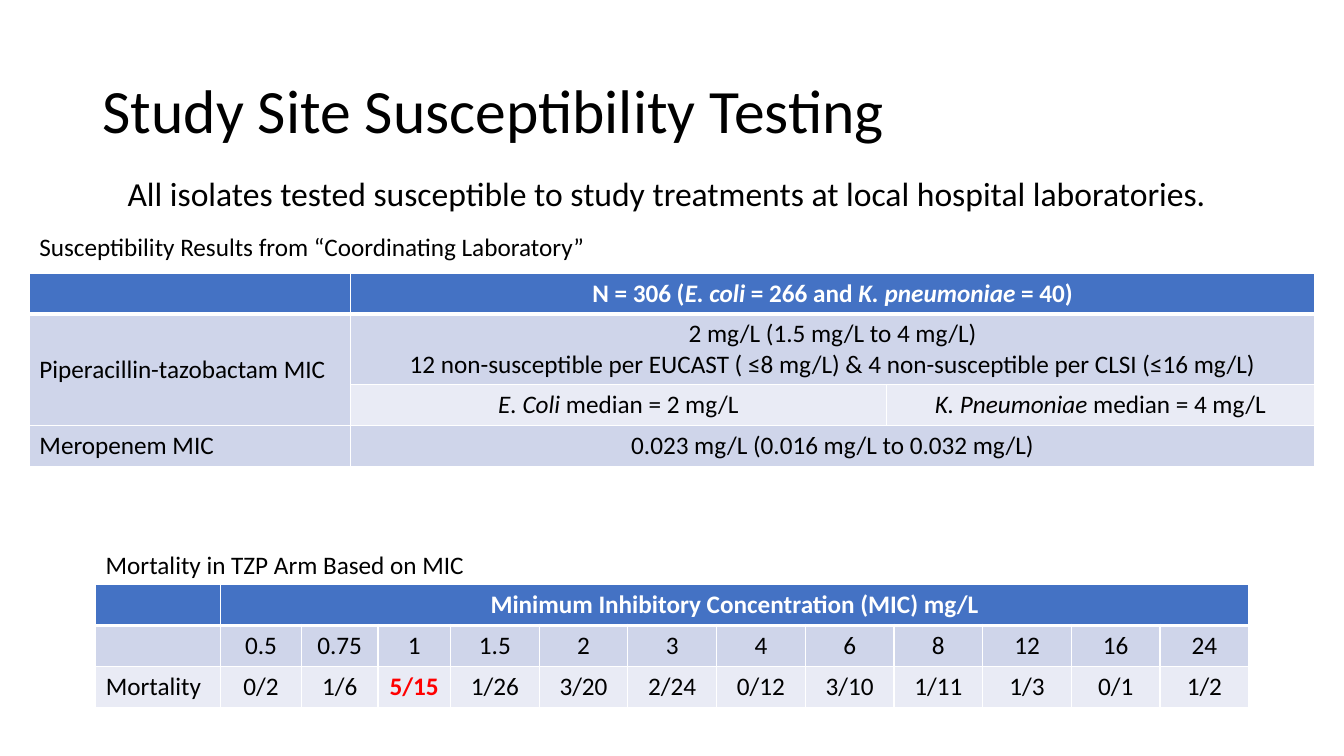
from dataclasses import dataclass

from lxml.etree import SubElement
from pptx import Presentation
from pptx.dml.color import RGBColor
from pptx.enum.text import MSO_ANCHOR, MSO_AUTO_SIZE, PP_ALIGN
from pptx.oxml.ns import qn
from pptx.util import Inches, Length, Pt

COLUMNS, ROWS = 160, 90
UNIT = Inches(7.5) / ROWS
FONT = "Calibri"
BLACK, WHITE, RED = "000000", "FFFFFF", "FF0000"
HEADER, BAND, LIGHT = "4472C4", "CFD5EA", "E9EBF5"
ROW_HEIGHT = 4.87


@dataclass(frozen=True)
class Box:
    left: float
    top: float
    width: float
    height: float

    def emu(self) -> list[Length]:
        return [grid(v) for v in (self.left, self.top, self.width, self.height)]


@dataclass(frozen=True)
class Caption:
    text: str
    box: Box
    size: int = 18


@dataclass(frozen=True)
class Cell:
    row: int
    col: int
    text: str = ""
    fill: str = BAND
    rows: int = 1
    cols: int = 1
    align: PP_ALIGN = PP_ALIGN.CENTER
    anchor: MSO_ANCHOR = MSO_ANCHOR.TOP
    color: str = BLACK
    bold: bool = False


@dataclass(frozen=True)
class Grid:
    left: float
    top: float
    widths: list[float]
    heights: list[float]
    cells: list[Cell]


def grid(units: float) -> Length:
    return Length(round(units * UNIT))


def rgb(color: str) -> RGBColor:
    return RGBColor.from_string(color)


def write(tf, text: str, size: int = 18, color: str = BLACK, bold: bool = False,
          align: PP_ALIGN = PP_ALIGN.LEFT) -> None:
    """Fill a text frame; lines become paragraphs and *marked* parts italic."""
    for i, line in enumerate(text.split("\n")):
        p = tf.add_paragraph() if i else tf.paragraphs[0]
        p.alignment = align
        for j, part in enumerate(line.split("*")):
            if not part:
                continue
            r = p.add_run()
            r.text = part
            r.font.color.rgb = rgb(color)
            style = {"name": FONT, "size": Pt(size), "bold": bold, "italic": j % 2 == 1}
            for name, value in style.items():
                setattr(r.font, name, value)


def add_borders(cell, bottom: float) -> None:
    tc_pr = cell._tc.get_or_add_tcPr()
    for side, points in {"L": 1, "R": 1, "T": 1, "B": bottom}.items():
        ln = SubElement(tc_pr, qn(f"a:ln{side}"), w=str(Pt(points)))
        SubElement(SubElement(ln, qn("a:solidFill")), qn("a:srgbClr"), val=WHITE)


def add_title(slide, text: str, box: Box) -> None:
    sp = slide.shapes.title
    sp.left, sp.top, sp.width, sp.height = box.emu()
    tf = sp.text_frame
    tf.auto_size = MSO_AUTO_SIZE.NONE
    tf.vertical_anchor = MSO_ANCHOR.MIDDLE
    write(tf, text, 44)
    tf.paragraphs[0].line_spacing = 0.9


def add_caption(slide, caption: Caption) -> None:
    tf = slide.shapes.add_textbox(*caption.box.emu()).text_frame
    tf.word_wrap = False
    tf.auto_size = MSO_AUTO_SIZE.SHAPE_TO_FIT_TEXT
    write(tf, caption.text, caption.size)


def add_grid(slide, spec: Grid) -> None:
    box = Box(spec.left, spec.top, sum(spec.widths), sum(spec.heights))
    table = slide.shapes.add_table(len(spec.heights), len(spec.widths), *box.emu()).table
    for column, width in zip(table.columns, spec.widths):
        column.width = grid(width)
    for row, height in zip(table.rows, spec.heights):
        row.height = grid(height)
    for item in spec.cells:
        last_row, last_col = item.row + item.rows, item.col + item.cols
        for r in range(item.row, last_row):
            for c in range(item.col, last_col):
                part = table.cell(r, c)
                add_borders(part, 3 if r == 0 else 1)
                part.fill.solid()
                part.fill.fore_color.rgb = rgb(item.fill)
        cell = table.cell(item.row, item.col)
        if item.rows * item.cols > 1:
            cell.merge(table.cell(last_row - 1, last_col - 1))
        cell.vertical_anchor = item.anchor
        write(cell.text_frame, item.text, color=item.color, bold=item.bold, align=item.align)


def header(text: str, cols: int) -> list[Cell]:
    return [Cell(0, 0, fill=HEADER),
            Cell(0, 1, text, HEADER, cols=cols, color=WHITE, bold=True)]


CAPTIONS = [
    Caption("All isolates tested susceptible to study treatments at local hospital laboratories.",
            Box(14, 20, 131.9, 6.06), 24),
    Caption("Susceptibility Results from “Coordinating Laboratory”", Box(3.5, 26.9, 67.9, 4.8)),
    Caption("Mortality in TZP Arm Based on MIC", Box(11.4, 64.8, 45.5, 4.8)),
]

SUSCEPTIBILITY = Grid(
    3.5, 32.5, [38.25, 63.75, 51], [ROW_HEIGHT, 8.4, ROW_HEIGHT, ROW_HEIGHT],
    header("N = 306 (*E. coli *= 266 and *K. pneumoniae* = 40)", 2) + [
        Cell(1, 0, "Piperacillin-tazobactam MIC", rows=2,
             align=PP_ALIGN.LEFT, anchor=MSO_ANCHOR.MIDDLE),
        Cell(1, 1, "2 mg/L (1.5 mg/L to 4 mg/L)\n12 non-susceptible per EUCAST ( ≤8 mg/L)"
                   " & 4 non-susceptible per CLSI (≤16 mg/L)", cols=2),
        Cell(2, 1, "*E. Coli* median = 2 mg/L", LIGHT),
        Cell(2, 2, "*K. Pneumoniae* median = 4 mg/L", LIGHT),
        Cell(3, 0, "Meropenem MIC", align=PP_ALIGN.LEFT),
        Cell(3, 1, "0.023 mg/L (0.016 mg/L to 0.032 mg/L)", cols=2),
    ])

DEATHS_BY_MIC = {
    "0.5": "0/2", "0.75": "1/6", "1": "5/15", "1.5": "1/26", "2": "3/20", "3": "2/24",
    "4": "0/12", "6": "3/10", "8": "1/11", "12": "1/3", "16": "0/1", "24": "1/2",
}
HIGHLIGHT = "1"

MORTALITY = Grid(
    11.4, 69.6, [14.88, 9.6, 9.12, 8.64] + [10.56] * 9, [ROW_HEIGHT] * 3,
    header("Minimum Inhibitory Concentration (MIC) mg/L", len(DEATHS_BY_MIC))
    + [Cell(1, 0), Cell(2, 0, "Mortality", LIGHT, align=PP_ALIGN.LEFT)]
    + [Cell(1, c, mic) for c, mic in enumerate(DEATHS_BY_MIC, 1)]
    + [Cell(2, c, deaths, LIGHT, color=RED if mic == HIGHLIGHT else BLACK,
            bold=mic == HIGHLIGHT)
       for c, (mic, deaths) in enumerate(DEATHS_BY_MIC.items(), 1)])


def main() -> None:
    prs = Presentation()
    prs.slide_width, prs.slide_height = grid(COLUMNS), grid(ROWS)
    slide = prs.slides.add_slide(prs.slide_layouts[5])
    add_title(slide, "Study Site Susceptibility Testing", Box(11, 4.8, 138, 17.4))
    for caption in CAPTIONS:
        add_caption(slide, caption)
    for table in (SUSCEPTIBILITY, MORTALITY):
        add_grid(slide, table)
    prs.save("out.pptx")


if __name__ == "__main__":
    main()
